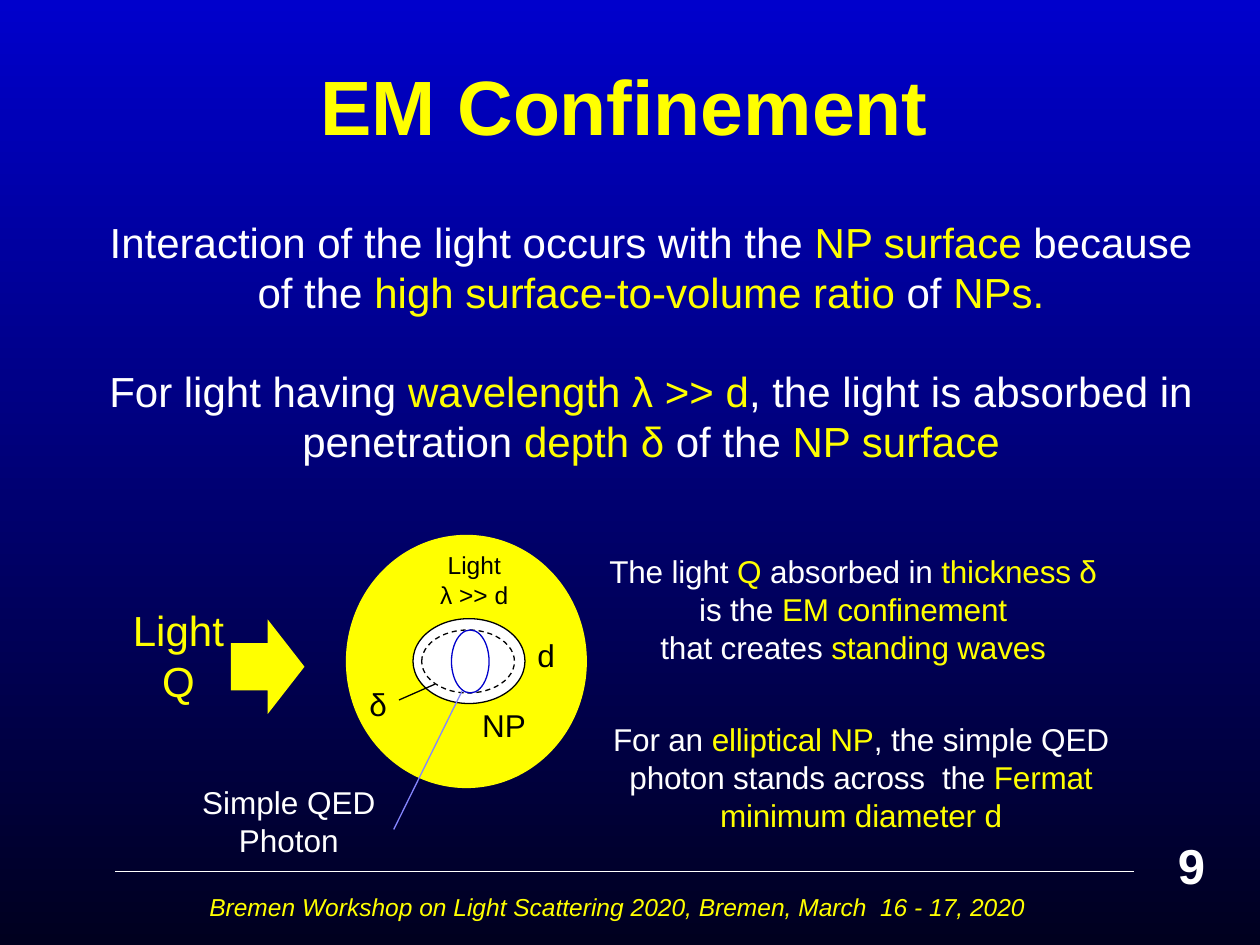
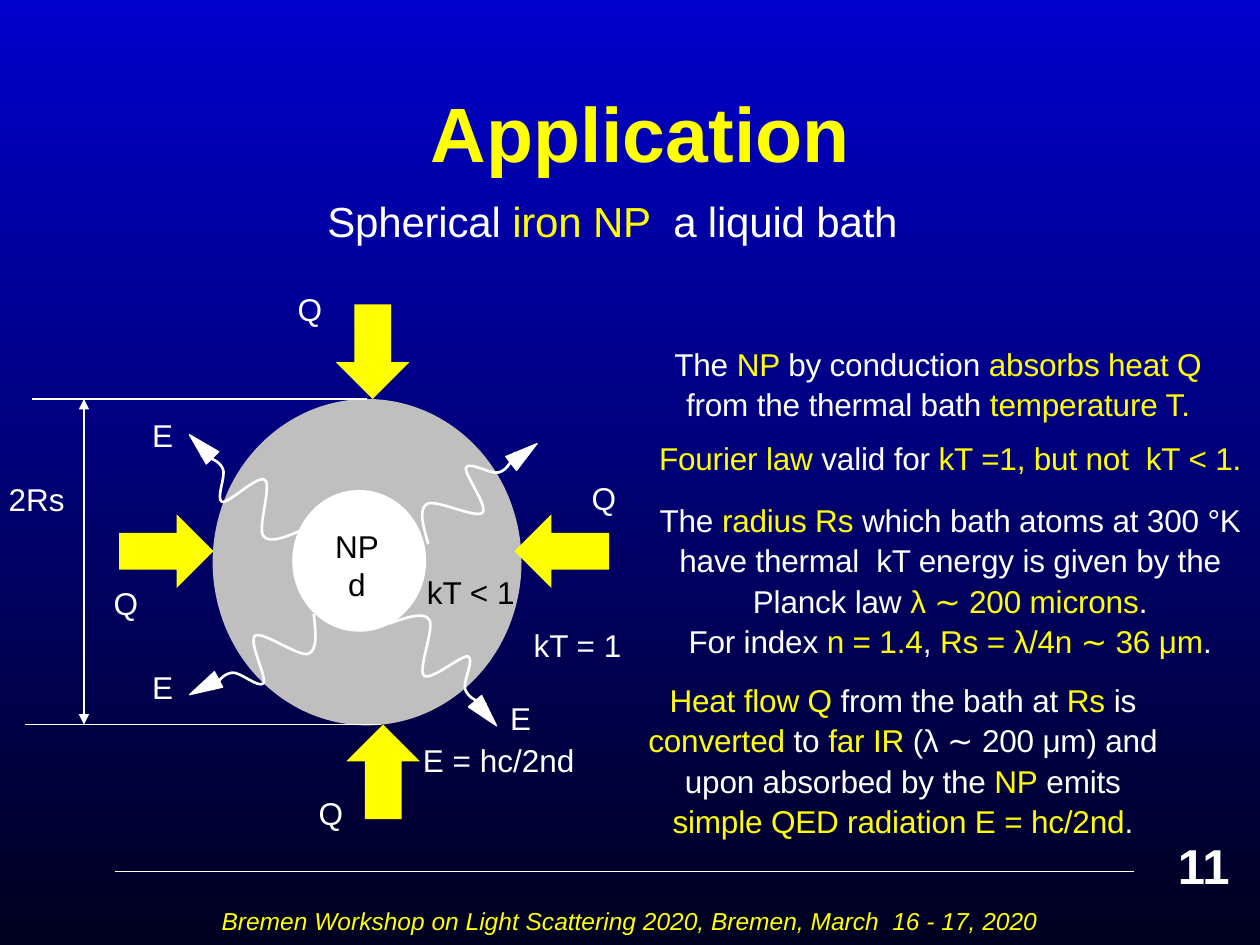
from math import cos, radians, sin

from pptx import Presentation
from pptx.dml.color import RGBColor
from pptx.enum.dml import MSO_LINE
from pptx.enum.shapes import MSO_CONNECTOR, MSO_SHAPE
from pptx.enum.text import MSO_ANCHOR, PP_ALIGN
from pptx.oxml.ns import qn
from pptx.oxml.xmlchemy import OxmlElement
from pptx.util import Pt

COLORS = {
    "sky": "0000CC", "night": "00001F", "white": "FFFFFF", "yellow": "FFFF00",
    "black": "000000", "gray": "BFBFBF", "ray": "8585FF",
}
FONT = "Arial"
FOOTER = "Bremen Workshop on Light Scattering 2020, Bremen, March  16 - 17, 2020"

# Emitted wave: a start point and Bezier control points around its centre
WAVE = [
    (-19.4, 27.7),
    (-22.3, 17.6), (-25.2, 7.6), (-20.2, 4.7),
    (-15.1, 1.8), (7.9, 13.3), (11.5, 9.7),
    (15.1, 6.1), (0.7, -12.6), (2.2, -16.2),
    (4.3, -19.8), (16.6, -11.9), (20.9, -13.3),
    (25.9, -14.8), (28.1, -19.8), (30.2, -24.8),
]
WAVE_TIP = (35.3, -24.1)
TIP_ANGLE = 52.5
TIP_W, TIP_H = 10, 18.7


def rgb(name):
    return RGBColor.from_string(COLORS[name])


# ---- Element helpers ----
def text(s, content, x, y, w, h, size=18, color="white", align=PP_ALIGN.CENTER,
         bold=False, italic=False, spc=0, gap=0, spacing=None, anchor=MSO_ANCHOR.TOP):
    """Paragraphs split at newlines, lines at |, and *...* marks yellow words."""
    tf = s.shapes.add_textbox(Pt(x), Pt(y), Pt(w), Pt(h)).text_frame
    tf.word_wrap = True
    tf.vertical_anchor = anchor
    for n, para in enumerate(content.split("\n")):
        p = tf.add_paragraph() if n else tf.paragraphs[0]
        p.alignment = align
        p.line_spacing = spacing
        p.space_before = Pt(gap if n else 0)
        for i, part in enumerate(para.split("*")):
            for j, piece in enumerate(part.split("|")):
                if j:
                    p.add_line_break()
                if not piece:
                    continue
                r = p.add_run()
                r.text = piece
                f = r.font
                f.name, f.size, f.bold, f.italic = FONT, Pt(size), bold, italic
                f.color.rgb = rgb("yellow" if i % 2 else color)
                if spc:
                    r._r.get_or_add_rPr().set("spc", str(round(spc * 100)))


def paint(sp, fill=None, line=None, width=0.75):
    sp.shadow.inherit = False
    if fill:
        sp.fill.solid()
        sp.fill.fore_color.rgb = rgb(fill)
    else:
        sp.fill.background()
    if line:
        sp.line.color.rgb = rgb(line)
        sp.line.width = Pt(width)
    else:
        sp.line.fill.background()


def shape(s, kind, x, y, w, h, fill=None, line=None, rotation=0, dash=False):
    sp = s.shapes.add_shape(kind, Pt(x), Pt(y), Pt(w), Pt(h))
    paint(sp, fill, line)
    sp.rotation = rotation % 360
    if dash:
        sp.line.dash_style = MSO_LINE.DASH


def line(s, x1, y1, x2, y2, color="white", arrows=False):
    c = s.shapes.add_connector(MSO_CONNECTOR.STRAIGHT, Pt(x1), Pt(y1), Pt(x2), Pt(y2))
    c.line.color.rgb = rgb(color)
    c.line.width = Pt(0.75)
    if arrows:
        ln = c.line._get_or_add_ln()
        for tag in ("a:headEnd", "a:tailEnd"):
            end = OxmlElement(tag)
            end.set("type", "triangle")
            ln.append(end)
    c._element.spPr.append(OxmlElement("a:effectLst"))


def wave(s, cx, cy, angle):
    """A wavy ray with a triangular tip, turned by angle around (cx, cy)."""
    a = radians(angle)

    def turn(x, y):
        return cx + x * cos(a) - y * sin(a), cy + x * sin(a) + y * cos(a)

    points = [tuple(Pt(v) for v in turn(*xy)) for xy in WAVE]
    builder = s.shapes.build_freeform(*points[0])
    builder.add_line_segments(points[1:], close=False)
    sp = builder.convert_to_shape()
    paint(sp, line="white", width=1.5)
    # Join each three control points into one curve
    steps = list(sp._element.iter(qn("a:lnTo")))
    for i in range(0, len(steps), 3):
        curve = OxmlElement("a:cubicBezTo")
        steps[i].addprevious(curve)
        for step in steps[i:i + 3]:
            curve.append(step[0])
            step.getparent().remove(step)
    x, y = turn(*WAVE_TIP)
    shape(s, MSO_SHAPE.ISOSCELES_TRIANGLE, x - TIP_W / 2, y - TIP_H / 2, TIP_W, TIP_H,
          "white", "white", rotation=TIP_ANGLE + angle)


# ---- Shared parts ----
def set_background(prs):
    fill = prs.slide_master.background.fill
    fill.gradient()
    fill.gradient_angle = 270
    for stop, name, pos in zip(fill.gradient_stops, ("sky", "night"), (0, 1)):
        stop.color.rgb = rgb(name)
        stop.position = pos


def base_slide(prs, title, number, title_at, footer_at):
    s = prs.slides.add_slide(prs.slide_layouts[6])
    line(s, 66, 498, 648, 498)
    text(s, title, *title_at, 612, 90, size=44, color="yellow", bold=True,
         anchor=MSO_ANCHOR.MIDDLE)
    text(s, FOOTER, *footer_at, 612, 24, size=14, color="yellow", italic=True)
    text(s, number, 666, 474, 54, 41, size=28, bold=True, align=PP_ALIGN.LEFT)
    return s


# ---- Slides ----
def confinement_slide(prs):
    s = base_slide(prs, "EM Confinement", "9", (51, 15), (47, 506))
    text(s, "Interaction of the light occurs with the *NP surface *because of the "
            "*high surface-to-volume ratio *of* NPs.*\n"
            "For light having *wavelength λ >> d*, the light is absorbed in penetration "
            "*depth δ *of the *NP surface*", 48, 120, 648, 181, size=24, gap=27.6)
    text(s, "The light *Q* absorbed in *thickness δ*\nis the* EM confinement*\n"
            "that creates *standing waves*", 330, 312, 315, 73, spc=-0.1)

    # Light around the nanoparticle
    oval = MSO_SHAPE.OVAL
    shape(s, oval, 198, 306, 137, 144, "yellow", "yellow")
    shape(s, oval, 236, 353.5, 64, 48.5, "white", "black")
    shape(s, oval, 241, 360, 53, 36, line="black", dash=True)
    line(s, 228, 400, 248.5, 391, "black")
    text(s, "Light\nλ >> d", 230, 311, 82, 41, size=14, color="black")
    for label, x, y, w in (("d", 300, 360, 33), ("δ", 204, 388, 48), ("NP", 268.5, 400, 42)):
        text(s, label, x, y, w, 29, color="black", align=PP_ALIGN.LEFT)

    # Incoming light
    shape(s, MSO_SHAPE.RIGHT_ARROW, 132, 354, 42, 54, "yellow")
    text(s, "Light\nQ", 66, 342, 72, 66, size=24, color="yellow")

    # Simple QED photon
    text(s, "For an *elliptical NP*, the simple QED photon stands across  the "
            "*Fermat minimum diameter d*", 336, 408, 312, 73, spc=-0.1)
    shape(s, oval, 258, 360, 21.5, 36, line="sky")
    text(s, "Simple QED\nPhoton", 108, 444, 114, 51)
    line(s, 225, 474, 264, 395, "ray")


def application_slide(prs):
    s = base_slide(prs, "Application", "11", (60, 30), (54, 514))
    text(s, "Spherical *iron NP  *a liquid bath", 180, 108, 402, 36, size=24,
         align=PP_ALIGN.LEFT, spc=-0.1)

    # Nanoparticle in its bath, with the emitted waves
    shape(s, MSO_SHAPE.OVAL, 121.5, 228, 176.5, 186.5, "gray")
    shape(s, MSO_SHAPE.OVAL, 167, 280, 76.5, 81, "white")
    text(s, "NP\nd", 178, 297.5, 52, 45, color="black")
    for cx, cy, angle in ((264.2, 283.3, 0), (143.3, 286.9, -97.4),
                          (251.3, 374, 86.4), (155.5, 374.8, -170.3)):
        wave(s, cx, cy, angle)

    # Diameter of the bath
    line(s, 209.5, 228, 18, 228)
    line(s, 217.5, 414, 14.5, 414)
    line(s, 48, 228, 48, 414, arrows=True)

    # Heat flowing in
    for kind, x, y, w, h in (
            (MSO_SHAPE.LEFT_ARROW, 294, 294, 54, 42), (MSO_SHAPE.RIGHT_ARROW, 68, 294, 54, 42),
            (MSO_SHAPE.DOWN_ARROW, 192, 174, 42, 54), (MSO_SHAPE.UP_ARROW, 198, 414, 42, 54)):
        shape(s, kind, x, y, w, h, "yellow")

    # Labels
    for label, x, y, w in (
            ("2Rs", -6, 271, 54), ("kT = 1", 276, 354, 108), ("E = hc/2nd", 228, 420, 114),
            ("E", 66, 234, 54), ("E", 270, 396, 55), ("E", 66, 378, 54),
            ("Q", 318, 270, 54), ("Q", 48, 330, 48), ("Q", 150, 162, 54), ("Q", 162, 450, 54)):
        text(s, label, x, y, w, 29)
    text(s, "kT < 1", 216, 324, 106, 29, color="black")

    # Explanation
    for content, x, y, w, h in (
            ("The *NP *by conduction *absorbs heat Q*|from the thermal bath *temperature T.*",
             356, 192, 360, 53),
            ("*Fourier law *valid for *kT =1, but not  kT < 1.*\n"
             "The *radius Rs *which bath atoms at 300 °K|"
             "have thermal  kT energy is given by the|Planck law *λ ∼ 200 microns*.|"
             "For index *n = 1.4*, *Rs = λ/4n ∼ 36 μm*.", 366, 246, 354, 135),
            ("*Heat flow Q *from the bath at *Rs *is|*converted* to *far IR *(λ ∼ 200 μm) and|"
             "upon absorbed by the *NP* emits|*simple QED radiation E = hc/2nd*.",
             336, 384, 360, 99)):
        text(s, content, x, y, w, h, spc=-0.1, spacing=1.07, gap=12)


def main():
    prs = Presentation()
    prs.slide_width, prs.slide_height = Pt(720), Pt(540)
    set_background(prs)
    confinement_slide(prs)
    application_slide(prs)
    prs.save("out.pptx")


if __name__ == "__main__":
    main()
